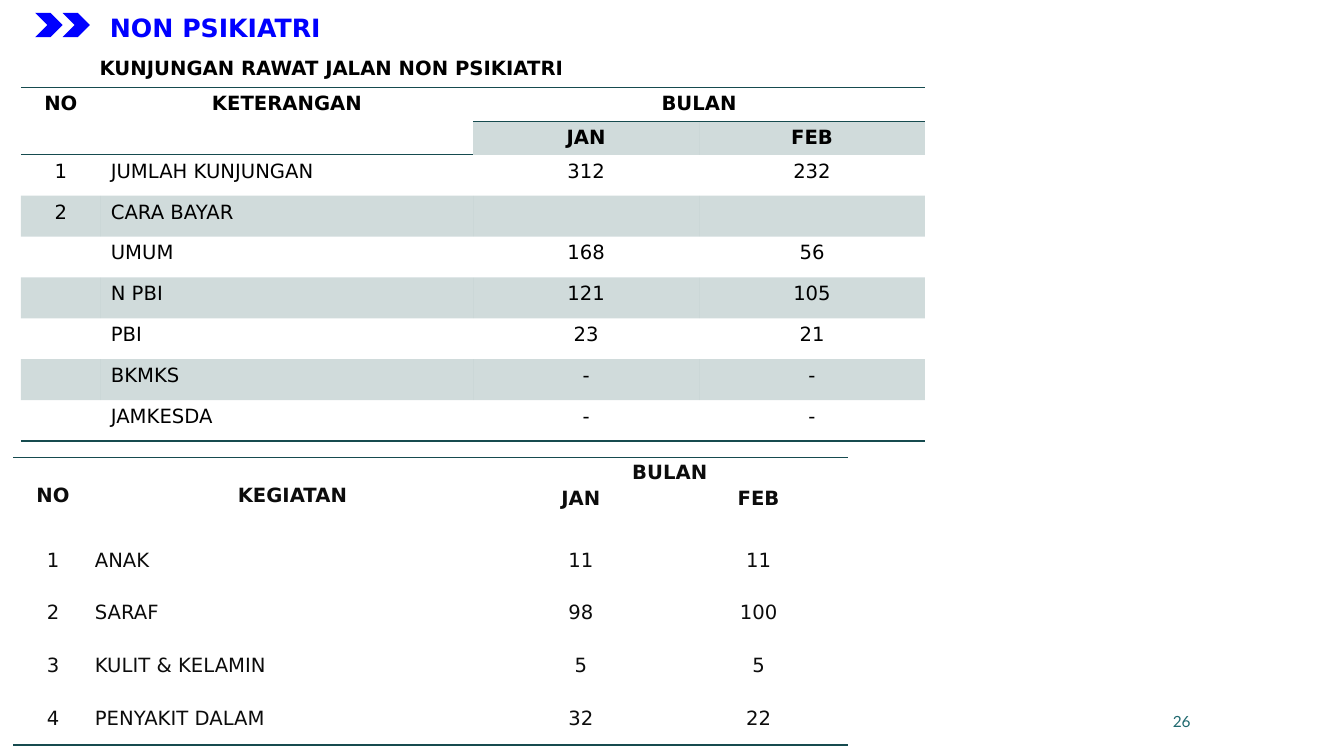
from lxml.etree import SubElement
from pptx import Presentation
from pptx.dml.color import RGBColor
from pptx.enum.shapes import MSO_SHAPE as Shape
from pptx.enum.text import MSO_ANCHOR as Anchor, PP_ALIGN as Align
from pptx.oxml.ns import qn
from pptx.util import Pt

THEME = {
    "font": "DejaVu Sans",
    "number_font": "Lato",
    "blue": "0000FF",
    "black": "000000",
    "soft_black": "0C0C0C",
    "teal": "164B4F",
    "number_teal": "1F696F",
    "title": 18,
    "body": 14,
    "number": 11,
    "no_grid": "{2D5ABB26-0587-4C30-8999-92F81FD0307C}",
}


def add_run(paragraph, text, size, color, bold, font=THEME["font"]):
    run = paragraph.add_run()
    run.text = text
    run.font.size = Pt(size)
    run.font.name = font
    run.font.bold = bold
    run.font.color.rgb = RGBColor.from_string(color)


def add_border(cell, side):
    line = SubElement(cell._tc.get_or_add_tcPr(), qn(f"a:{side}"), w=str(Pt(1)))
    fill = SubElement(line, qn("a:solidFill"))
    SubElement(fill, qn("a:srgbClr"), val=THEME["teal"])


presentation = Presentation()
presentation.slide_width = Pt(960)
presentation.slide_height = Pt(540)
slide = presentation.slides.add_slide(presentation.slide_layouts[6])

for left in (25.2, 44.7):
    chevron = slide.shapes.add_shape(Shape.CHEVRON, Pt(left), Pt(9.2), Pt(19.5), Pt(17.3))
    chevron.shadow.inherit = False
    chevron.fill.solid()
    chevron.fill.fore_color.rgb = RGBColor.from_string(THEME["blue"])
    chevron.line.fill.background()

labels = [
    ("NON PSIKIATRI", (64.8, 5, 178, 29), Align.CENTER, Anchor.TOP, 1,
     THEME["title"], THEME["blue"], True, THEME["font"]),
    ("KUNJUNGAN RAWAT JALAN NON PSIKIATRI", (64.1, 38.2, 365, 22), Align.LEFT, Anchor.TOP, 0.9,
     THEME["body"], THEME["black"], True, THEME["font"]),
    ("26", (633.6, 500.4, 224, 29), Align.RIGHT, Anchor.MIDDLE, 1,
     THEME["number"], THEME["number_teal"], False, THEME["number_font"]),
]
for text, box, align, anchor, spacing, size, color, bold, font in labels:
    label = slide.shapes.add_textbox(*map(Pt, box))
    label.text_frame.word_wrap = True
    label.text_frame.vertical_anchor = anchor
    paragraph = label.text_frame.paragraphs[0]
    paragraph.alignment = align
    paragraph.line_spacing = spacing
    add_run(paragraph, text, size, color, bold, font)

activity = {
    "place": (9.4, 327),
    "columns": (57, 285, 127, 127),
    "heights": [20, 34] + [37.8] * 4,
    "color": THEME["soft_black"],
    "anchor": Anchor.MIDDLE,
    "margins": (1.4, 0.7, 1.4, 0),
    "header_rule": False,
    "shaded": (),
    "rows": [
        ("NO", "KEGIATAN", "BULAN", ""),
        ("", "", "JAN", "FEB"),
        ("1", "ANAK", "11", "11"),
        ("2", "SARAF", "98", "100"),
        ("3", "KULIT & KELAMIN", "5", "5"),
        ("4", "PENYAKIT DALAM", "32", "22"),
    ],
}
visits = {
    "place": (15, 62.5),
    "columns": (57, 266, 161.4, 161.4),
    "heights": [24, 24] + [29.2] * 7,
    "color": THEME["black"],
    "anchor": Anchor.TOP,
    "margins": (7.2, 3.6, 7.2, 3.6),
    "header_rule": True,
    "shaded": ((1, 2), (1, 3), *((row, column) for row in (3, 5, 7) for column in range(4))),
    "rows": [
        ("NO", "KETERANGAN", "BULAN", ""),
        ("", "", "JAN", "FEB"),
        ("1", "JUMLAH KUNJUNGAN", "312", "232"),
        ("2", "CARA BAYAR", "", ""),
        ("", "UMUM", "168", "56"),
        ("", "N PBI", "121", "105"),
        ("", "PBI", "23", "21"),
        ("", "BKMKS", "-", "-"),
        ("", "JAMKESDA", "-", "-"),
    ],
}

for data in (activity, visits):
    rows = data["rows"]
    frame = slide.shapes.add_table(
        len(rows), 4, *map(Pt, data["place"]),
        Pt(sum(data["columns"])), Pt(sum(data["heights"])))
    table = frame.table
    table.first_row = False
    table.horz_banding = False
    table._tbl.tblPr.find(qn("a:tableStyleId")).text = THEME["no_grid"]
    for column, width in zip(table.columns, data["columns"]):
        column.width = Pt(width)
    for row, height in zip(table.rows, data["heights"]):
        row.height = Pt(height)
    for column in (0, 1):
        table.cell(0, column).merge(table.cell(1, column))
    table.cell(0, 2).merge(table.cell(0, 3))

    for row, texts in enumerate(rows):
        for column, text in enumerate(texts):
            cell = table.cell(row, column)
            cell.vertical_anchor = Anchor.TOP if row == 1 else data["anchor"]
            cell.margin_left, cell.margin_top, cell.margin_right, cell.margin_bottom = map(
                Pt, data["margins"])
            paragraph = cell.text_frame.paragraphs[0]
            header = row < 2
            paragraph.alignment = Align.LEFT if column == 1 and not header else Align.CENTER
            if text:
                add_run(paragraph, text, THEME["body"], data["color"], header)
            else:
                SubElement(paragraph._p, qn("a:endParaRPr"), sz=str(THEME["body"] * 100))

            if row == 0:
                add_border(cell, "lnT")
            under_header = data["header_rule"] and (row == 0 or row == 1 and column < 2)
            if under_header or row == len(rows) - 1:
                add_border(cell, "lnB")
            if (row, column) in data["shaded"]:
                cell.fill.solid()
                cell.fill.fore_color.rgb = RGBColor.from_string(THEME["teal"])
                color = cell._tc.tcPr.find(f"{qn('a:solidFill')}/{qn('a:srgbClr')}")
                SubElement(color, qn("a:alpha"), val="20000")
            else:
                cell.fill.background()

presentation.save("out.pptx")
